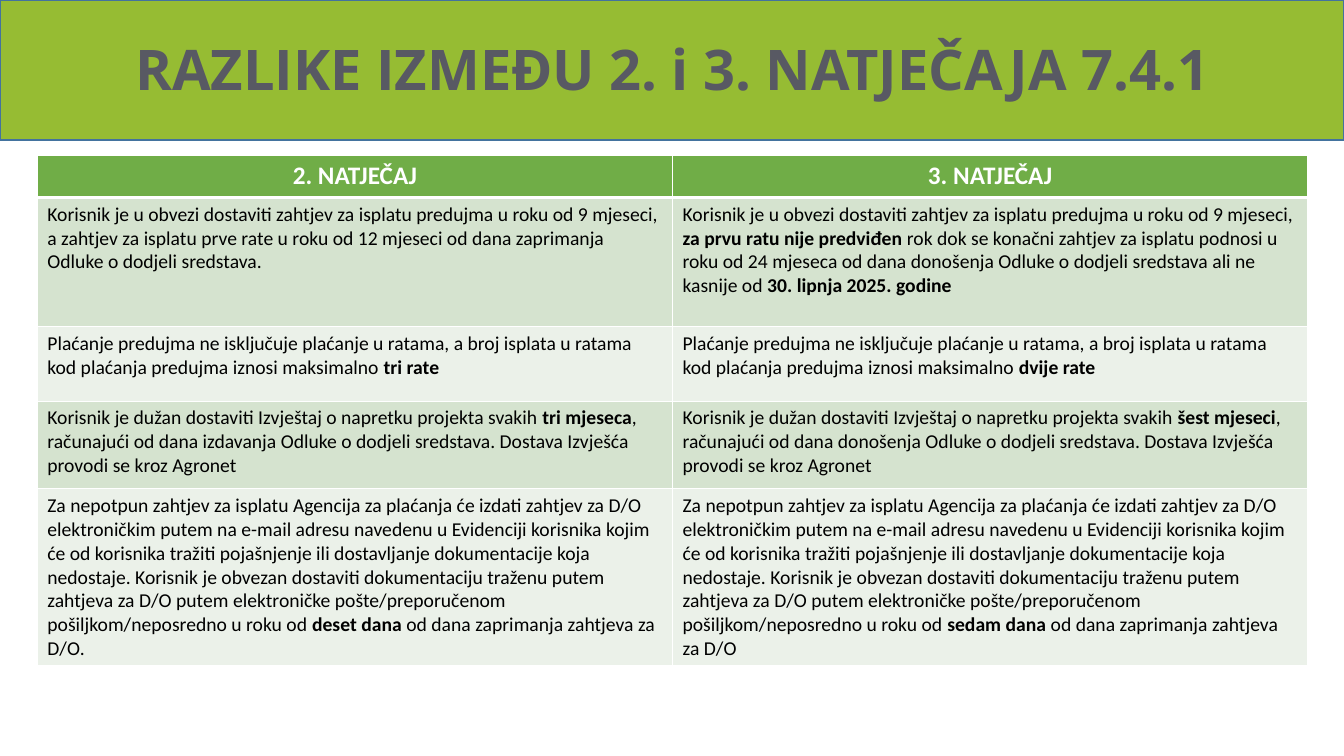
"""Builds a slide comparing the terms of the second and third calls."""
from lxml import etree
from pptx import Presentation
from pptx.dml.color import RGBColor
from pptx.enum.shapes import MSO_SHAPE
from pptx.enum.text import MSO_ANCHOR, MSO_AUTO_SIZE, PP_ALIGN
from pptx.oxml.ns import qn
from pptx.util import Inches, Pt

RECTANGLE = MSO_SHAPE.RECTANGLE
MIDDLE = MSO_ANCHOR.MIDDLE
NO_FIT = MSO_AUTO_SIZE.NONE
CENTER, LEFT = PP_ALIGN.CENTER, PP_ALIGN.LEFT

LIME = RGBColor(0x96, 0xBC, 0x33)
BLUE = RGBColor(0x43, 0x73, 0x9E)
SLATE = RGBColor(0x58, 0x59, 0x63)
GREEN = RGBColor(0x70, 0xAD, 0x47)
BANDS = (RGBColor(0xD5, 0xE3, 0xCF), RGBColor(0xEB, 0xF1, 0xE9))
WHITE = RGBColor(0xFF, 0xFF, 0xFF)
BLACK = RGBColor(0x00, 0x00, 0x00)

WIDTH, HEIGHT = Inches(13.33), Inches(7.5)
MARGIN = Inches(0.37)
CONTENT_WIDTH = Inches(12.6)
BAND_HEIGHT = Inches(1.39)
TABLE_TOP = Inches(1.54)
ROW_HEIGHTS = (0.42, 1.28, 0.74, 0.87, 1.72)
THIN, THICK = Pt(1), Pt(3)

TITLE = "RAZLIKE IZMEĐU 2. i 3. NATJEČAJA 7.4.1"
HEADERS = ("2. NATJEČAJ", "3. NATJEČAJ")
ADVANCE = ("Korisnik je u obvezi dostaviti zahtjev za isplatu predujma "
           "u roku od 9 mjeseci, ")
INSTALMENTS = ("Plaćanje predujma ne isključuje plaćanje u ratama, a broj isplata "
               "u ratama kod plaćanja predujma iznosi maksimalno **{}**")
REPORT = ("Korisnik je dužan dostaviti Izvještaj o napretku projekta svakih **{}**, "
          "računajući od dana {} Odluke o dodjeli sredstava. "
          "Dostava Izvješća provodi se kroz Agronet")
SUPPLEMENT = ("Za nepotpun zahtjev za isplatu Agencija za plaćanja će izdati zahtjev "
              "za D/O elektroničkim putem na e-mail adresu navedenu u Evidenciji "
              "korisnika kojim će od korisnika tražiti pojašnjenje ili dostavljanje "
              "dokumentacije koja nedostaje. Korisnik je obvezan dostaviti "
              "dokumentaciju traženu putem zahtjeva za D/O putem elektroničke "
              "pošte/preporučenom pošiljkom/neposredno u roku od **{} dana **"
              "od dana zaprimanja zahtjeva za D/O{}")
TERMS = (
    (ADVANCE + "a zahtjev za isplatu prve rate u roku od 12 mjeseci od dana "
               "zaprimanja Odluke o dodjeli sredstava.",
     ADVANCE + "**za prvu ratu nije predviđen **rok dok se konačni zahtjev za "
               "isplatu podnosi u roku od 24 mjeseca od dana donošenja Odluke o "
               "dodjeli sredstava ali ne kasnije od **30. lipnja 2025. godine**"),
    (INSTALMENTS.format("tri rate"), INSTALMENTS.format("dvije rate")),
    (REPORT.format("tri mjeseca", "izdavanja"),
     REPORT.format("šest mjeseci", "donošenja")),
    (SUPPLEMENT.format("deset", "."), SUPPLEMENT.format("sedam", "")),
)


def format_font(font, name, size, color, bold):
    """Apply typeface, point size, colour and weight."""
    font.name = name
    font.size = Pt(size)
    font.color.rgb = color
    font.bold = bold


def add_title(page):
    """Place the title on a full-width band."""
    title = page.shapes.title
    band = page.shapes.add_shape(RECTANGLE, 0, 0, WIDTH, BAND_HEIGHT)
    band.shadow.inherit = False
    band.fill.solid()
    band.fill.fore_color.rgb = LIME
    band.line.color.rgb = BLUE
    band.line.width = THIN
    title.element.addprevious(band.element)

    title.left, title.top = MARGIN, Inches(0.27)
    title.width, title.height = CONTENT_WIDTH, Inches(0.89)
    frame = title.text_frame
    frame.text = TITLE
    frame.word_wrap = True
    frame.auto_size = NO_FIT
    frame.vertical_anchor = MIDDLE
    para = frame.paragraphs[0]
    para.alignment = CENTER
    para.line_spacing = 0.9
    format_font(para.runs[0].font, "Open Sans", 40, SLATE, True)


def set_borders(cell, top, bottom):
    """Draw white cell borders with the given top and bottom widths."""
    properties = cell._tc.get_or_add_tcPr()
    for side, width in (("L", THIN), ("R", THIN), ("T", top), ("B", bottom)):
        line = etree.SubElement(properties, qn(f"a:ln{side}"), w=str(width))
        fill = etree.SubElement(line, qn("a:solidFill"))
        etree.SubElement(fill, qn("a:srgbClr"), val=str(WHITE))


def fill_cell(cell, text, color, size, text_color, alignment):
    """Write text with **bold** parts on a solid cell background."""
    cell.fill.solid()
    cell.fill.fore_color.rgb = color
    para = cell.text_frame.paragraphs[0]
    para.alignment = alignment
    for index, part in enumerate(text.split("**")):
        if part:
            span = para.add_run()
            span.text = part
            format_font(span.font, "Calibri", size, text_color, index % 2 == 1)


def add_comparison(page):
    """Add the table that sets the two calls side by side."""
    frame = page.shapes.add_table(len(ROW_HEIGHTS), len(HEADERS), MARGIN, TABLE_TOP,
                                  CONTENT_WIDTH, Inches(sum(ROW_HEIGHTS)))
    table = frame.table
    for row, height in zip(table.rows, ROW_HEIGHTS):
        row.height = Inches(height)
    for column, header in enumerate(HEADERS):
        cell = table.cell(0, column)
        set_borders(cell, THIN, THICK)
        fill_cell(cell, f"**{header}**", GREEN, 18, WHITE, CENTER)
    for row, terms in enumerate(TERMS, start=1):
        for column, text in enumerate(terms):
            cell = table.cell(row, column)
            set_borders(cell, THICK if row == 1 else THIN, THIN)
            fill_cell(cell, text, BANDS[(row - 1) % 2], 14, BLACK, LEFT)


def main():
    """Build and save the deck."""
    deck = Presentation()
    deck.slide_width, deck.slide_height = WIDTH, HEIGHT
    page = deck.slides.add_slide(deck.slide_layouts.get_by_name("Title Only"))
    add_title(page)
    add_comparison(page)
    deck.save("out.pptx")


if __name__ == "__main__":
    main()
